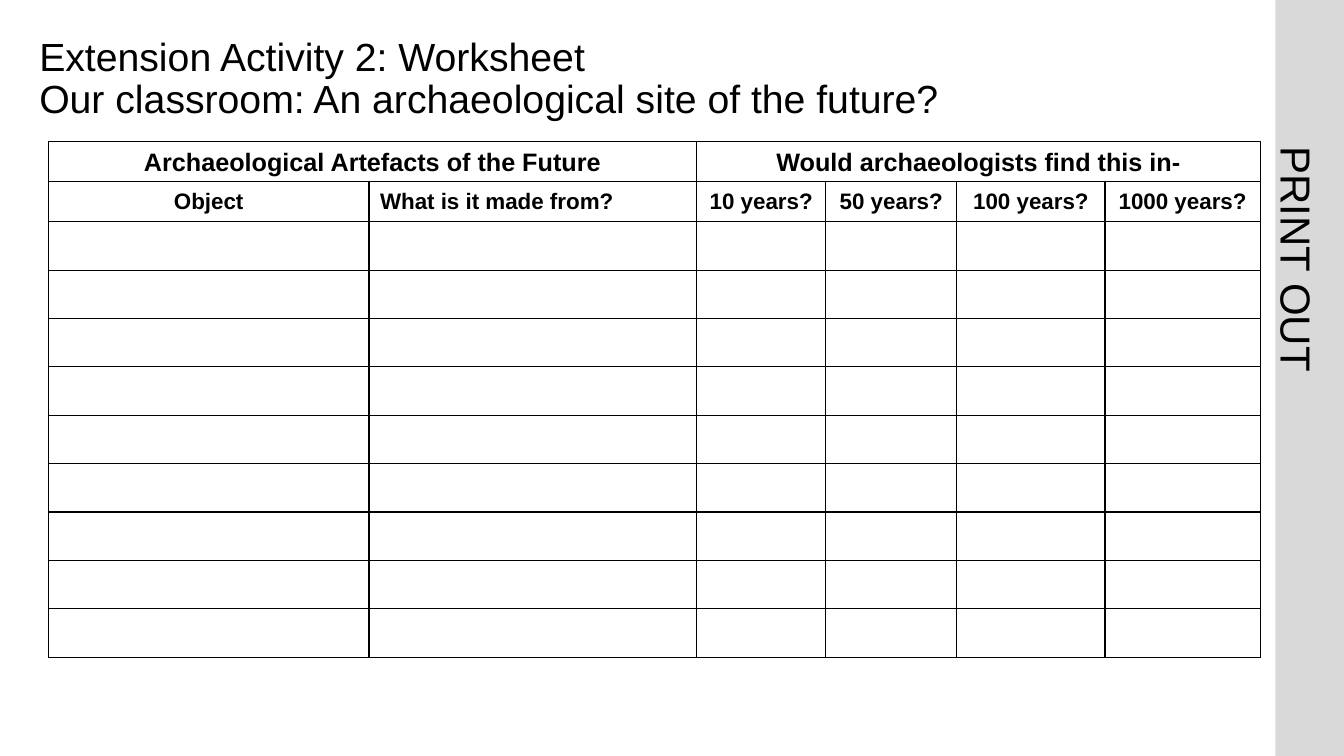
from lxml import etree
from pptx import Presentation
from pptx.dml.color import RGBColor
from pptx.enum import shapes, text
from pptx.oxml.ns import qn
from pptx.util import Inches, Pt

CENTER, LEFT = text.PP_ALIGN.CENTER, text.PP_ALIGN.LEFT
MIDDLE = text.MSO_ANCHOR.MIDDLE


def color(value):
    return RGBColor.from_string(value)


def add_run(p, words, size, bold=False):
    r = p.add_run()
    r.text = words
    r.font.name, r.font.size, r.font.bold = "Arial", Pt(size), bold
    r.font.color.rgb = color("000000")


prs = Presentation()
prs.slide_width, prs.slide_height = Inches(13.33), Inches(7.5)
s = prs.slides.add_slide(prs.slide_layouts[6])

# Side band with its vertical label
band_width = Inches(0.68)
band = s.shapes.add_shape(shapes.MSO_SHAPE.RECTANGLE, prs.slide_width - band_width, 0,
                          band_width, prs.slide_height)
band.shadow.inherit = False
band.fill.solid()
band.fill.fore_color.rgb = color("D9D9D9")
band.line.fill.background()

label = s.shapes.add_textbox(Inches(11.07), Inches(2.21), Inches(4.01), Inches(0.72))
label.rotation = 90
tf = label.text_frame
tf.word_wrap = True
tf.margin_left = tf.margin_right = tf.margin_top = tf.margin_bottom = 0
p = tf.paragraphs[0]
p.alignment, p.line_spacing = CENTER, Pt(58.8)
add_run(p, "PRINT OUT", 30)

# Title
title = s.shapes.add_textbox(Inches(0.39), Inches(0.4), Inches(12.03), Inches(0.78))
tf = title.text_frame
tf.word_wrap, tf.vertical_anchor, tf.margin_left = True, MIDDLE, 0
p = tf.paragraphs[0]
p.line_spacing = 0.9
add_run(p, "Extension Activity 2: Worksheet ", 28)
p.add_line_break()
add_run(p, "Our classroom: An archaeological site of the future?", 28)

# Worksheet grid: group headings sit above the columns they span
columns = [("Object", 3.18, CENTER), ("What is it made from?", 3.25, LEFT),
           ("10 years?", 1.28, CENTER), ("50 years?", 1.3, CENTER),
           ("100 years?", 1.47, CENTER), ("1000 years?", 1.54, CENTER)]
widths = [Inches(width) for _, width, _ in columns]
left, top = Inches(0.48), Inches(1.4)
head_height, row_height, blank_rows = Inches(0.4), Inches(0.48), 9

groups = [("Archaeological Artefacts of the Future", 0, 2),
          ("Would archaeologists find this in-", 2, 6)]
for words, first, last in groups:
    sp = s.shapes.add_shape(shapes.MSO_SHAPE.RECTANGLE, left + sum(widths[:first]), top,
                            sum(widths[first:last]), head_height)
    sp.shadow.inherit = False
    sp.fill.background()
    sp.line.color.rgb, sp.line.width = color("000000"), Pt(0.75)
    tf = sp.text_frame
    tf.word_wrap, tf.vertical_anchor = True, MIDDLE
    p = tf.paragraphs[0]
    p.alignment = CENTER
    add_run(p, words, 18, True)

table = s.shapes.add_table(1 + blank_rows, len(columns), left, top + head_height, sum(widths),
                           head_height + blank_rows * row_height).table
table.first_row = table.horz_banding = False
for column, width in zip(table.columns, widths):
    column.width = width
for i, row in enumerate(table.rows):
    row.height = row_height if i else head_height
    for cell in row.cells:
        for side in ("a:lnL", "a:lnR", "a:lnT", "a:lnB"):
            line = etree.SubElement(cell._tc.get_or_add_tcPr(), qn(side), w=str(Pt(1)))
            fill = etree.SubElement(line, qn("a:solidFill"))
            etree.SubElement(fill, qn("a:srgbClr"), val="000000")
        cell.fill.solid()
        cell.fill.fore_color.rgb = color("FFFFFF")

for cell, (words, _, alignment) in zip(table.rows[0].cells, columns):
    cell.vertical_anchor = MIDDLE
    cell.margin_left = cell.margin_right = Inches(0.11)
    cell.margin_top = cell.margin_bottom = 0
    p = cell.text_frame.paragraphs[0]
    p.alignment = alignment
    add_run(p, words, 16, True)

prs.save("out.pptx")
